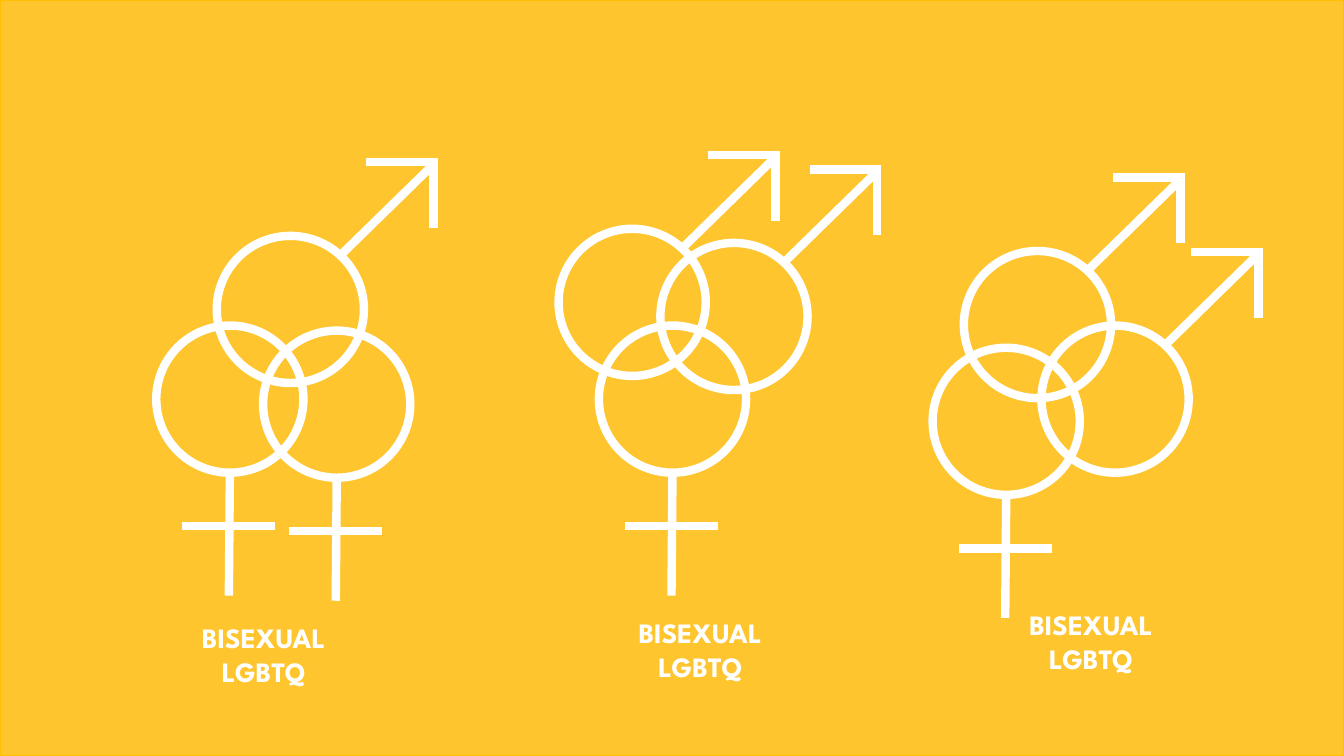
from pptx import Presentation
from pptx import util as u
from pptx.dml.color import RGBColor
from pptx.enum import shapes, text
from pptx.oxml.ns import qn
from lxml import etree

MALE = [(2.15, -0.71, 1.25, 0.17), (2.17, -0.73, 1.48, -0.73), (2.15, -0.77, 2.15, -0.08)]
FEMALE = [(0.72, 2.68, 0.73, 1.46), (1.18, 1.99, 0.26, 1.99)]
SIGNS = [
    (FEMALE, 1.55, 3.23), (FEMALE, 5.94, 3.23), (MALE, 10.33, 3.23),
    (FEMALE, 2.61, 3.28), (MALE, 9.56, 2.49), (MALE, 6.55, 2.41),
    (MALE, 2.15, 2.34), (FEMALE, 9.25, 3.45), (MALE, 5.54, 2.27),
]
LABELS = [(1.66, 6.11, 1.91), (5.67, 6.06, 2.55), (9.75, 5.98, 2.14)]


def color(code):
    """Turn a hex string into a colour."""
    return RGBColor.from_string(code)


def write(frame, lines, font="League Spartan", size=20, ink="FFFFFF", bold=True):
    """Write centred lines into a text frame."""
    for i, line in enumerate(lines):
        para = frame.paragraphs[0] if i == 0 else frame.add_paragraph()
        para.alignment = text.PP_ALIGN.CENTER
        run = para.add_run()
        run.text = line
        run.font.name, run.font.size, run.font.bold = font, u.Pt(size), bold
        run.font.color.rgb = color(ink)


class Board:
    """Hold the style and the current slide."""

    ink, ground, edge = "FFFFFF", "FEC52E", "FFC000"
    weight, ring = 6, 1.46

    def __init__(self, slide):
        """Keep the slide to draw on."""
        self.slide = slide

    def shape(self, kind, left, top, width, height, line, weight, fill=None):
        """Add a preset shape."""
        item = self.slide.shapes.add_shape(kind, *map(u.Inches, (left, top, width, height)))
        item.shadow.inherit = False
        if fill:
            item.fill.solid()
            item.fill.fore_color.rgb = color(fill)
        else:
            item.fill.background()
        item.line.color.rgb = color(line)
        item.line.width = u.Pt(weight)

    def line(self, *ends):
        """Add a straight stroke."""
        item = self.slide.shapes.add_connector(shapes.MSO_CONNECTOR.STRAIGHT, *map(u.Inches, ends))
        item.line.color.rgb = color(self.ink)
        item.line.width = u.Pt(self.weight)
        etree.SubElement(item._element.spPr, qn("a:effectLst"))

    def sign(self, strokes, left, top):
        """Add a ring with its strokes."""
        self.shape(shapes.MSO_SHAPE.OVAL, left, top, self.ring, self.ring, self.ink, self.weight)
        for x1, y1, x2, y2 in strokes:
            self.line(left + x1, top + y1, left + x2, top + y2)

    def label(self, left, top, width, lines):
        """Add a caption."""
        box = self.slide.shapes.add_textbox(*map(u.Inches, (left, top, width, 0.77)))
        box.text_frame.word_wrap = True
        box.text_frame.auto_size = text.MSO_AUTO_SIZE.SHAPE_TO_FIT_TEXT
        write(box.text_frame, lines, ink=self.ink)


def main():
    """Build the slide and save it."""
    deck = Presentation()
    deck.slide_width, deck.slide_height = u.Inches(13.33), u.Inches(7.5)
    board = Board(deck.slides.add_slide(deck.slide_layouts[6]))
    board.shape(shapes.MSO_SHAPE.RECTANGLE, 0, 0, 13.33, 7.5, board.edge, 1, board.ground)
    for sign in SIGNS:
        board.sign(*sign)
    for place in LABELS:
        board.label(*place, ["BISEXUAL", "LGBTQ"])
    deck.save("out.pptx")


if __name__ == "__main__":
    main()
